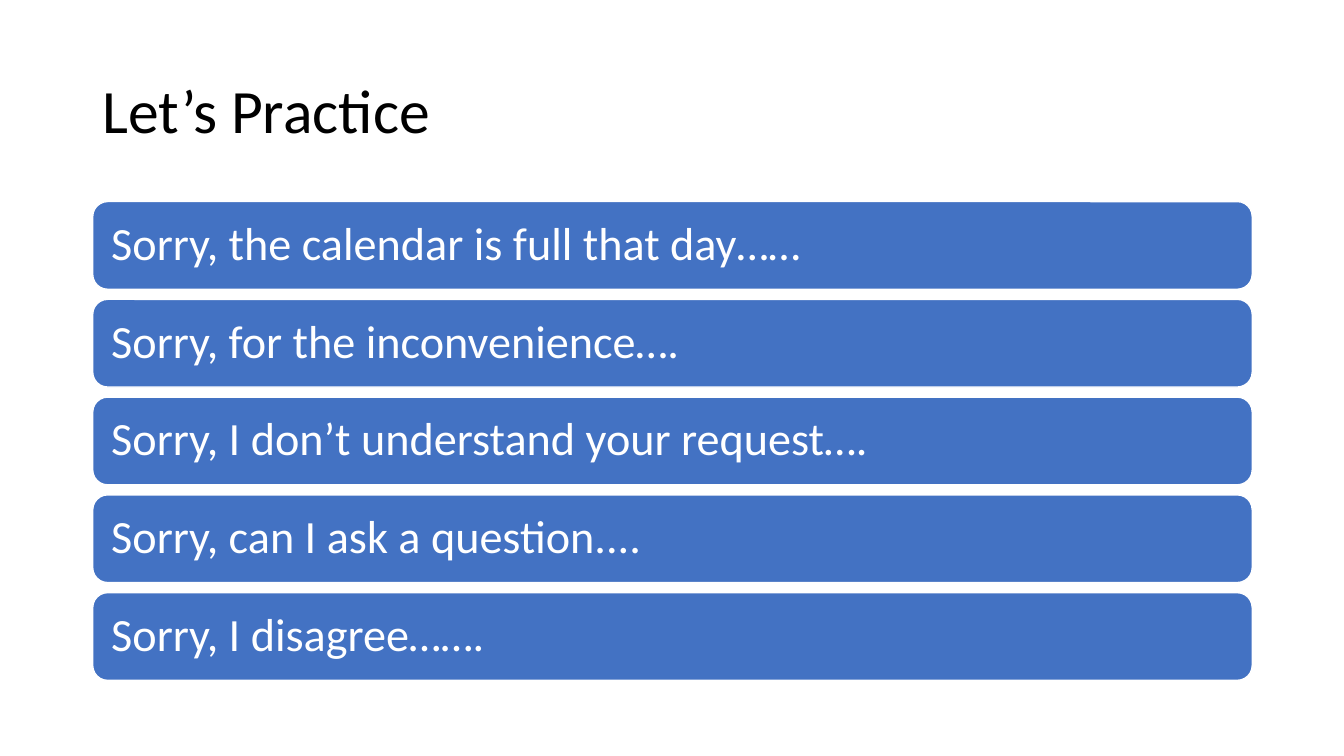
"""Build the "Let's Practice" slide with five apology prompts in rounded bars."""
from pptx import Presentation
from pptx.dml.color import RGBColor
from pptx.enum.shapes import MSO_SHAPE
from pptx.enum.text import MSO_ANCHOR, PP_ALIGN
from pptx.util import Inches, Pt

LEFT, WIDTH = Inches(0.92), Inches(11.5)
BAR_TOP, BAR_HEIGHT, BAR_STEP = 2, 0.87, 0.97
PROMPTS = [
    "Sorry, the calendar is full that day……",
    "Sorry, for the inconvenience….",
    "Sorry, I don’t understand your request….",
    "Sorry, can I ask a question....",
    "Sorry, I disagree…….",
]


def color(hex_string):
    return RGBColor.from_string(hex_string)


def write(shape, text, size, hex_string, side_inset, edge_inset):
    frame = shape.text_frame
    frame.word_wrap = True
    frame.vertical_anchor = MSO_ANCHOR.MIDDLE
    frame.margin_left = frame.margin_right = Inches(side_inset)
    frame.margin_top = frame.margin_bottom = Inches(edge_inset)
    frame.text = text
    paragraph = frame.paragraphs[0]
    paragraph.alignment = PP_ALIGN.LEFT
    paragraph.line_spacing = 0.9
    font = paragraph.runs[0].font
    font.name = "Calibri"
    font.size = Pt(size)
    font.color.rgb = color(hex_string)


presentation = Presentation()
presentation.slide_width = Inches(13.33)
presentation.slide_height = Inches(7.5)
slide = presentation.slides.add_slide(presentation.slide_layouts[6])

title = slide.shapes.add_textbox(LEFT, Inches(0.4), WIDTH, Inches(1.45))
write(title, "Let’s Practice", 44, "000000", 0.1, 0.05)

for index, prompt in enumerate(PROMPTS):
    bar = slide.shapes.add_shape(
        MSO_SHAPE.ROUNDED_RECTANGLE,
        LEFT, Inches(BAR_TOP + index * BAR_STEP), WIDTH, Inches(BAR_HEIGHT),
    )
    bar.shadow.inherit = False
    bar.adjustments[0] = 0.17
    bar.fill.solid()
    bar.fill.fore_color.rgb = color("4372C3")
    bar.line.color.rgb = color("FFFFFF")
    bar.line.width = Pt(1)
    write(bar, prompt, 33, "FFFFFF", 0.14, 0.14)

presentation.save("out.pptx")
